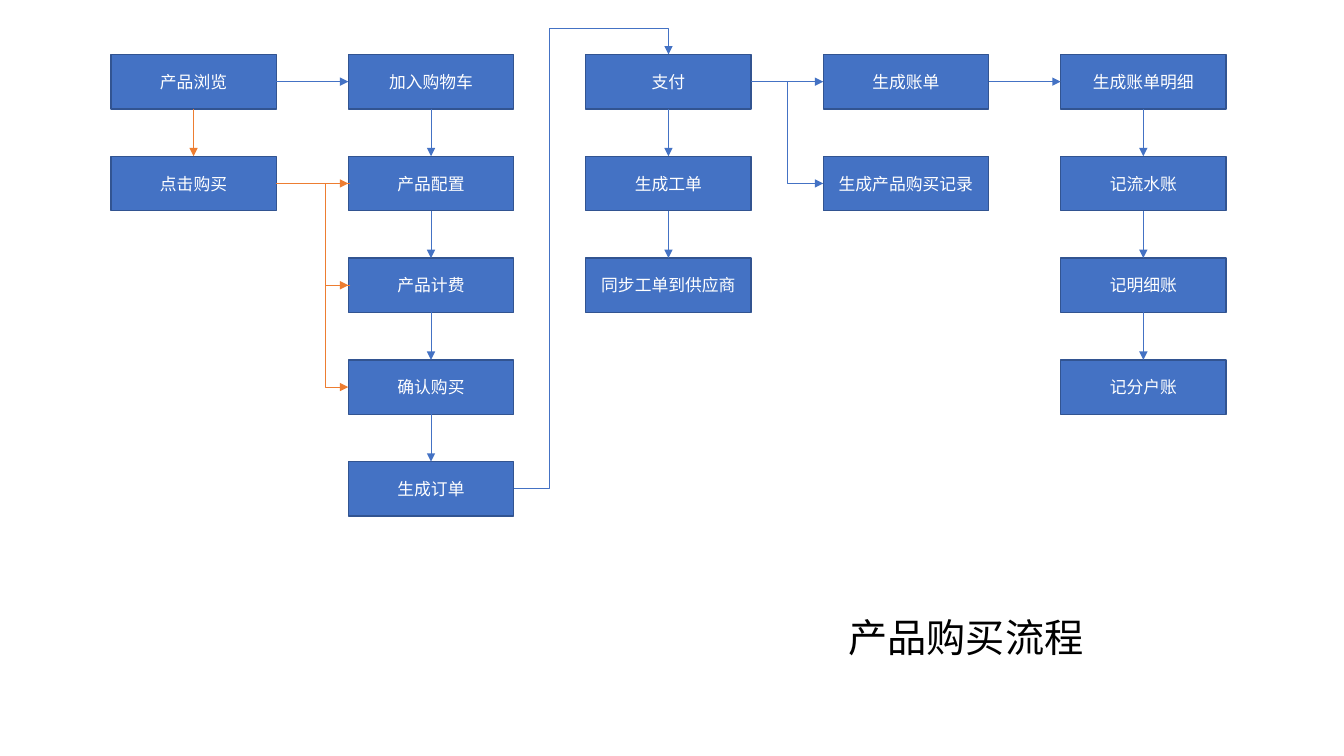
"""Builds the product purchase flow chart slide."""
from dataclasses import dataclass

from lxml import etree
from pptx import Presentation
from pptx import util as u
from pptx.dml.color import RGBColor
from pptx.enum import shapes, text
from pptx.oxml.ns import qn

BLUE = RGBColor(0x44, 0x72, 0xC4)
NAVY = RGBColor(0x32, 0x54, 0x91)
ORANGE = RGBColor(0xED, 0x7D, 0x31)
WHITE = RGBColor(0xFF, 0xFF, 0xFF)
BLACK = RGBColor(0, 0, 0)

GRID_LEFT, GRID_TOP = 1.1, 0.54
COLUMN_STEP, ROW_STEP = (10.52 - GRID_LEFT) / 4, 1.01
BOX_WIDTH, BOX_HEIGHT = 1.64, 0.54
TOP, LEFT, BOTTOM, RIGHT = range(4)
SIDE_SHARES = {TOP: (0.5, 0), LEFT: (0, 0.5), BOTTOM: (0.5, 1), RIGHT: (1, 0.5)}

Cell = tuple[int, int]


@dataclass(frozen=True)
class Arrow:
    start: Cell
    end: Cell
    colour: RGBColor = BLUE


@dataclass(frozen=True)
class Elbow:
    start: Cell
    start_side: int
    end: Cell
    end_side: int
    preset: str
    bends: tuple[float, ...]
    colour: RGBColor = BLUE
    inset: float = 0


COLUMNS = (
    ("产品浏览", "点击购买"),
    ("加入购物车", "产品配置", "产品计费", "确认购买", "生成订单"),
    ("支付", "生成工单", "同步工单到供应商"),
    ("生成账单", "生成产品购买记录"),
    ("生成账单明细", "记流水账", "记明细账", "记分户账"),
)
DOWNWARD = [
    Arrow((column, row), (column, row + 1), BLUE if column else ORANGE)
    for column, steps in enumerate(COLUMNS) if column != 3
    for row in range(len(steps) - 1)
]
ACROSS = [
    Arrow((0, 0), (1, 0)),
    Arrow((0, 1), (1, 1), ORANGE),
    Arrow((2, 0), (3, 0)),
    Arrow((3, 0), (4, 0)),
]
ELBOWS = [
    Elbow((1, 4), RIGHT, (2, 0), TOP, "bentConnector4", (0.23, 1.06)),
    Elbow((2, 0), RIGHT, (3, 1), LEFT, "bentConnector3", (0.5,)),
    *(Elbow((1, row), LEFT, (1, row + 1), LEFT, "bentConnector3", (12.5,), ORANGE, 0.02)
      for row in (1, 2)),
]


def apply(target, **values) -> None:
    for name, value in values.items():
        setattr(target, name, value)


def corner(cell: Cell) -> tuple[float, float]:
    return GRID_LEFT + cell[0] * COLUMN_STEP, GRID_TOP + cell[1] * ROW_STEP


def side_point(cell: Cell, side: int) -> tuple[float, float]:
    left, top = corner(cell)
    across, down = SIDE_SHARES[side]
    return left + across * BOX_WIDTH, top + down * BOX_HEIGHT


def write(shape, words: str, size: int, colour: RGBColor, **frame_values) -> None:
    apply(shape.text_frame, word_wrap=True, **frame_values)
    para = shape.text_frame.paragraphs[0]
    para.alignment = text.PP_ALIGN.CENTER
    span = para.add_run()
    span.text = words
    apply(span.font, name="Calibri", size=u.Pt(size))
    span.font.color.rgb = colour


def add_box(page, cell: Cell, words: str):
    left, top = corner(cell)
    box = page.shapes.add_shape(
        shapes.MSO_SHAPE.RECTANGLE,
        *map(u.Inches, (left, top, BOX_WIDTH, BOX_HEIGHT)))
    box.shadow.inherit = False
    box.fill.solid()
    box.fill.fore_color.rgb = BLUE
    box.line.color.rgb = NAVY
    box.line.width = u.Pt(1)
    write(box, words, 12, WHITE, vertical_anchor=text.MSO_ANCHOR.MIDDLE)
    return box


def add_line(page, kind, begin: tuple[float, float], end: tuple[float, float],
             colour: RGBColor):
    line = page.shapes.add_connector(kind, *map(u.Inches, (*begin, *end)))
    line.line.color.rgb = colour
    line.line.width = u.Pt(0.5)
    properties = line._element.spPr
    etree.SubElement(properties.find(qn("a:ln")), qn("a:tailEnd"), type="triangle")
    etree.SubElement(properties, qn("a:effectLst"))
    return line


def add_arrow(page, arrow: Arrow, boxes: dict) -> None:
    same_column = arrow.start[0] == arrow.end[0]
    leave, enter = (BOTTOM, TOP) if same_column else (RIGHT, LEFT)
    line = add_line(page, shapes.MSO_CONNECTOR.STRAIGHT, side_point(arrow.start, leave),
                    side_point(arrow.end, enter), arrow.colour)
    line.begin_connect(boxes[arrow.start], leave)
    line.end_connect(boxes[arrow.end], enter)


def add_elbow(page, elbow: Elbow) -> None:
    x, y = side_point(elbow.start, elbow.start_side)
    line = add_line(page, shapes.MSO_CONNECTOR.ELBOW, (x + elbow.inset, y),
                    side_point(elbow.end, elbow.end_side), elbow.colour)
    geometry = line._element.spPr.find(qn("a:prstGeom"))
    geometry.set("prst", elbow.preset)
    guides = geometry.find(qn("a:avLst"))
    for number, bend in enumerate(elbow.bends, 1):
        etree.SubElement(guides, qn("a:gd"), name=f"adj{number}",
                         fmla=f"val {round(bend * 100000)}")


def main() -> None:
    deck = Presentation()
    apply(deck, slide_width=u.Inches(13.33), slide_height=u.Inches(7.5))
    page = deck.slides.add_slide(deck.slide_layouts[6])
    title = page.shapes.add_textbox(*map(u.Inches, (7.27, 6.04, 4.62, 0.57)))
    write(title, "产品购买流程", 28, BLACK,
          auto_size=text.MSO_AUTO_SIZE.SHAPE_TO_FIT_TEXT)
    boxes = {
        (column, row): add_box(page, (column, row), words)
        for column, steps in enumerate(COLUMNS)
        for row, words in enumerate(steps)
    }
    for arrow in DOWNWARD + ACROSS:
        add_arrow(page, arrow, boxes)
    for elbow in ELBOWS:
        add_elbow(page, elbow)
    deck.save("out.pptx")


if __name__ == "__main__":
    main()
